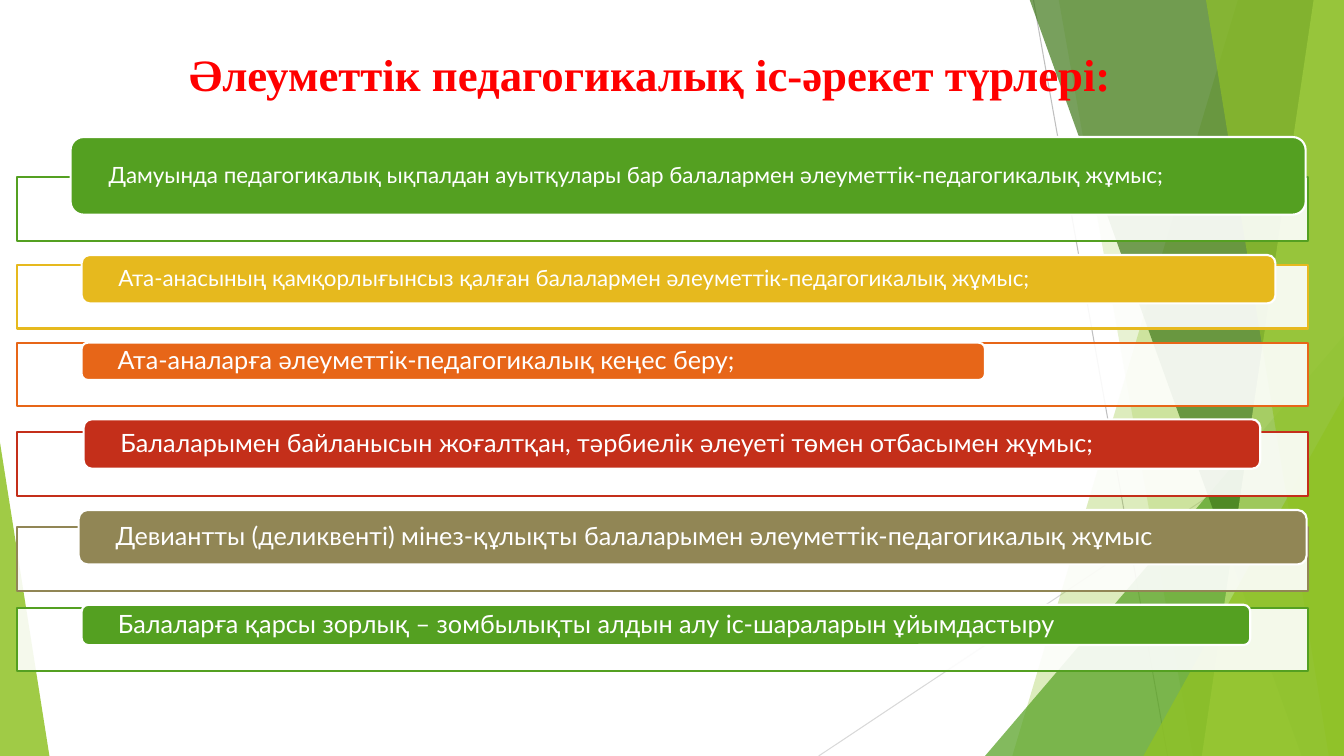
from lxml import etree
from pptx import Presentation
from pptx import util as u
from pptx.dml.color import RGBColor
from pptx.enum import shapes, text
from pptx.oxml import ns

W, H = 13.33, 7.5
INK = {"white": "FFFFFF", "title": "FF0000", "green": "54A021",
       "gold": "E6B91E", "orange": "E76618", "red": "C42F1A",
       "khaki": "918655", "lime": "90C226", "pale": "C0E474",
       "dark": "3F7819", "grey": "BFBFBF", "light": "D9D9D9"}
KIND = shapes.MSO_SHAPE

# Each row: frame top, tab box, colour, text size, words
ROWS = [
    (1.76, (0.7, 1.36, 12.25, 0.77), "green", 16,
     "Дамуында педагогикалық ықпалдан ауытқулары бар балалармен әлеуметтік-педагогикалық жұмыс;"),
    (2.63, (0.81, 2.53, 11.84, 0.48), "gold", 16,
     "Ата-анасының қамқорлығынсыз қалған балалармен әлеуметтік-педагогикалық жұмыс;"),
    (3.4, (0.81, 3.4, 8.96, 0.37), "orange", 18,
     "Ата-аналарға әлеуметтік-педагогикалық кеңес беру;"),
    (4.29, (0.83, 4.16, 11.67, 0.49), "red", 18,
     "Балаларымен байланысын жоғалтқан, тәрбиелік әлеуеті төмен отбасымен жұмыс;"),
    (5.23, (0.78, 5.06, 12.18, 0.54), "khaki", 18,
     "Девиантты (деликвенті) мінез-құлықты балаларымен әлеуметтік-педагогикалық жұмыс"),
    (6.03, (0.81, 6, 11.59, 0.4), "green", 18,
     "Балаларға қарсы зорлық – зомбылықты алдын алу іс-шараларын ұйымдастыру"),
]


def rgb(name):
    return RGBColor.from_string(INK[name])


def paint(shape, fill, alpha=100, line=None):
    """Set fill, its opacity in percent, and outline."""
    shape.shadow.inherit = False
    shape.fill.solid()
    shape.fill.fore_color.rgb = rgb(fill)
    if alpha < 100:
        tint = shape.fill._xPr.find(".//" + ns.qn("a:srgbClr"))
        etree.SubElement(tint, ns.qn("a:alpha"), val=str(alpha * 1000))
    if line:
        shape.line.color.rgb = rgb(line)
        shape.line.width = u.Pt(1.5)
    else:
        shape.line.fill.background()


def block(slide, kind, box):
    return slide.shapes.add_shape(kind, *map(u.Inches, box))


def ray(slide, start, end, tone):
    line = slide.shapes.add_connector(
        shapes.MSO_CONNECTOR.STRAIGHT, *map(u.Inches, start + end))
    line.line.color.rgb = rgb(tone)
    line.line.width = u.Pt(0.75)
    etree.SubElement(line._element.spPr, ns.qn("a:effectLst"))


def shard(slide, top, foot, fill, alpha):
    """Band from the given top and foot points to the right edge."""
    spots = [(W, -0.01), (W, H), (foot, H)]
    pen = slide.shapes.build_freeform(u.Inches(top), u.Inches(-0.01))
    pen.add_line_segments([(u.Inches(x), u.Inches(y)) for x, y in spots])
    paint(pen.convert_to_shape(), fill, alpha)


def wedge(slide, box, tip, fill, alpha):
    shape = block(slide, KIND.ISOSCELES_TRIANGLE, box)
    shape.adjustments[0] = tip
    paint(shape, fill, alpha)


def decor(slide):
    ray(slide, (10.25, 0), (11.58, H), "grey")
    ray(slide, (W, 4.03), (8.12, H), "light")
    shard(slide, 12.28, 10.04, "lime", 30)
    shard(slide, 10.5, 11.83, "lime", 20)
    wedge(slide, (9.77, 3.33, 3.56, 4.17), 1, "green", 72)
    shard(slide, 10.21, 12.91, "dark", 70)
    shard(slide, 13.03, 11.92, "pale", 70)
    shard(slide, 11.96, 13.18, "lime", 65)
    wedge(slide, (11.34, 3.93, 1.99, 3.57), 1, "lime", 80)
    wedge(slide, (0, 4.39, 0.49, 3.11), 0, "lime", 85)


def write(para, words, size, font, tone, bold=False):
    run = para.add_run()
    run.text = words
    run.font.size = u.Pt(size)
    run.font.name = font
    run.font.bold = bold
    run.font.color.rgb = rgb(tone)


def item(slide, top, box, tone, size, words):
    """Framed row with a coloured tab."""
    frame = block(slide, KIND.RECTANGLE, (0.17, top, 12.8, 0.63))
    paint(frame, "white", 90, tone)
    tab = block(slide, KIND.ROUNDED_RECTANGLE, box)
    paint(tab, tone, line="white")
    body = tab.text_frame
    body.word_wrap = True
    body.vertical_anchor = text.MSO_ANCHOR.MIDDLE
    body.margin_left = body.margin_right = u.Inches(0.34)
    body.margin_top = body.margin_bottom = 0
    para = body.paragraphs[0]
    para.alignment = text.PP_ALIGN.LEFT
    para.line_spacing = 0.9
    write(para, words, size, "Lato", "white")


def title(slide, box):
    body = slide.shapes.add_textbox(*map(u.Inches, box)).text_frame
    body.word_wrap = True
    body.auto_size = text.MSO_AUTO_SIZE.SHAPE_TO_FIT_TEXT
    para = body.paragraphs[0]
    para.alignment = text.PP_ALIGN.CENTER
    write(para, "Әлеуметтік педагогикалық іс-әрекет түрлері:", 32,
          "Times New Roman", "title", True)


def main():
    deck = Presentation()
    deck.slide_width, deck.slide_height = u.Inches(W), u.Inches(H)
    slide = deck.slides.add_slide(deck.slide_layouts[6])
    decor(slide)
    for row in ROWS:
        item(slide, *row)
    title(slide, (1.28, 0.41, 10.34, 0.64))
    deck.save("out.pptx")


if __name__ == "__main__":
    main()
